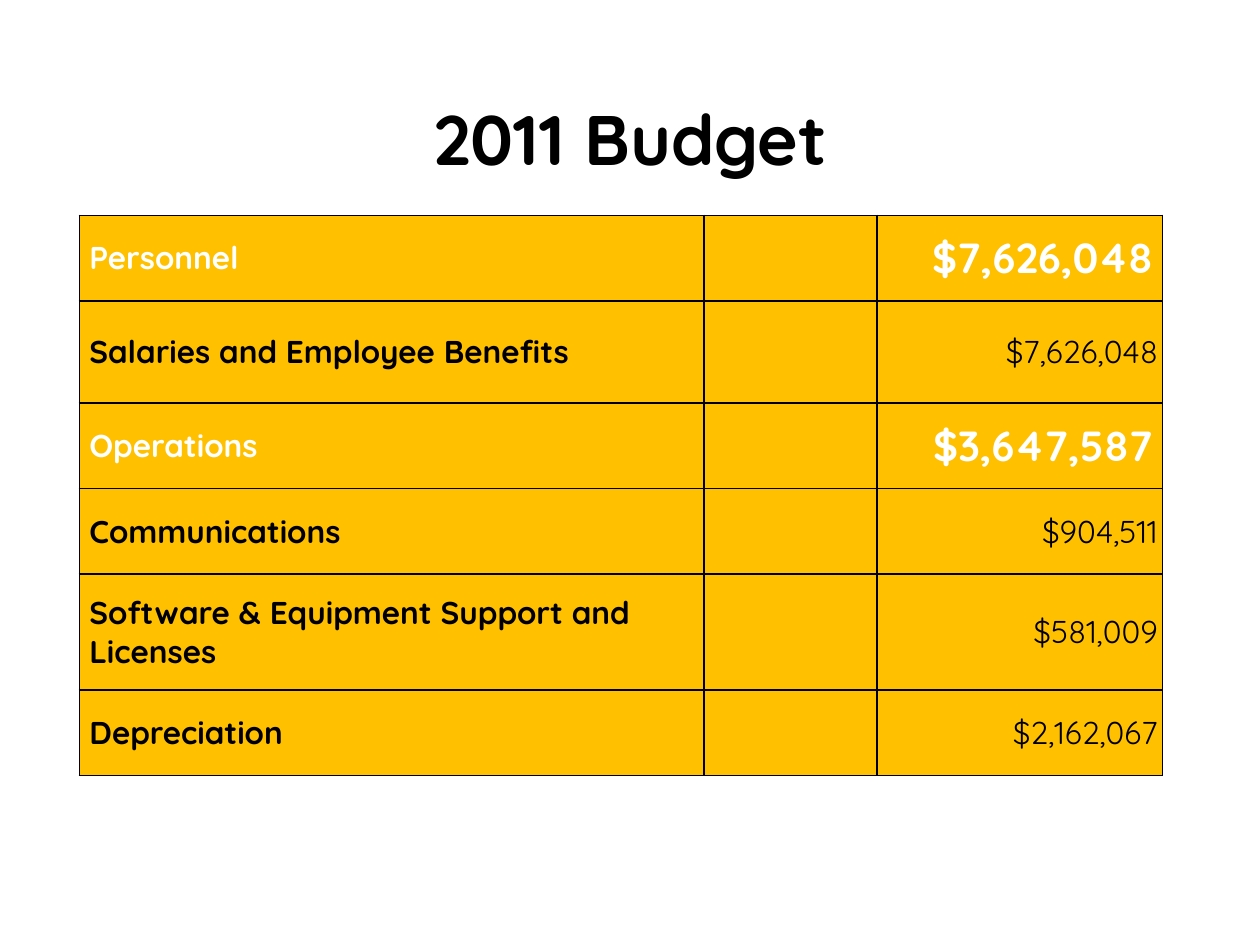
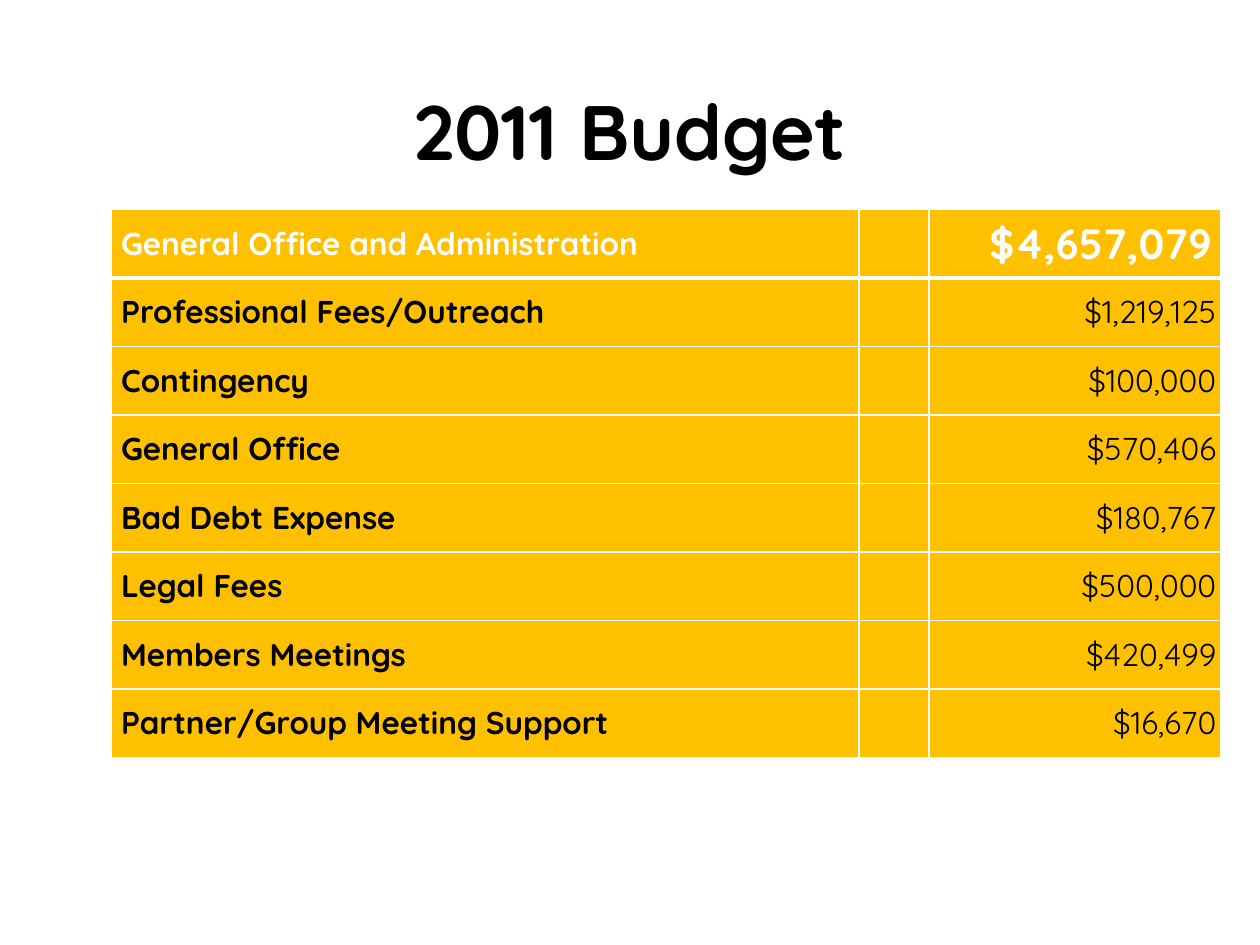
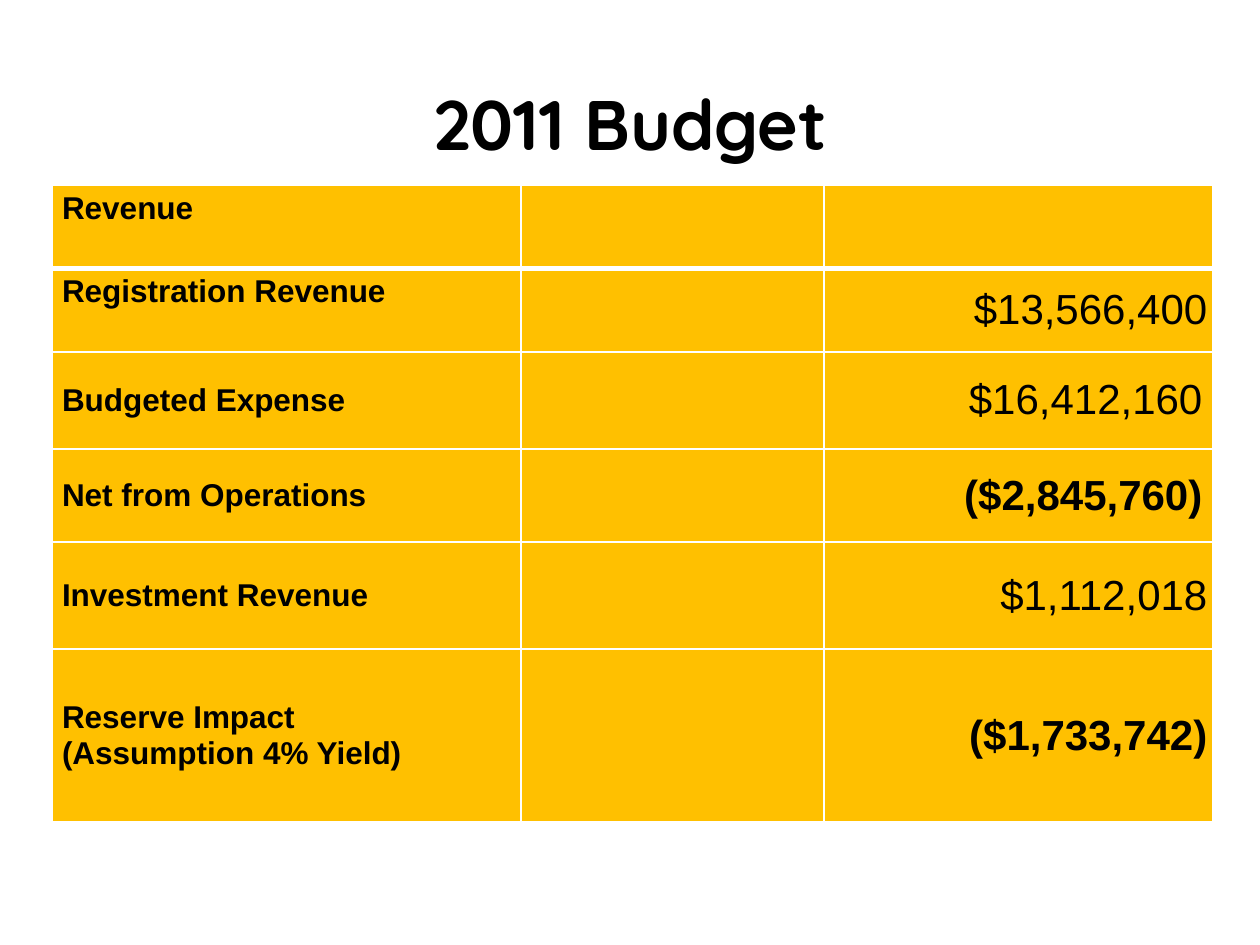
from dataclasses import dataclass

import lxml.etree
import pptx
import pptx.dml.color
import pptx.enum.text
import pptx.oxml.ns
import pptx.util

Cm = pptx.util.Cm
Pt = pptx.util.Pt
Anchor = pptx.enum.text.MSO_ANCHOR
Align = pptx.enum.text.PP_ALIGN


@dataclass(frozen=True)
class Theme:
    gold: str = "FFC000"
    black: str = "000000"
    white: str = "FFFFFF"
    display: str = "Quicksand"
    plain: str = "Arial"
    title: int = 40
    large_title: int = 44
    label: int = 18
    total: int = 24
    thin: int = 1
    thick: int = 3
    wide_inset: float = 0.2
    narrow_inset: float = 0.1


THEME = Theme()


@dataclass(frozen=True)
class Box:
    left: float
    top: float
    width: float
    height: float


@dataclass(frozen=True)
class Style:
    size: int = THEME.label
    color: str = THEME.black
    bold: bool = True
    inset: float = THEME.wide_inset
    anchor: Anchor = Anchor.MIDDLE


LABEL = Style()
TOP_LABEL = Style(anchor=Anchor.TOP)
HEADING = Style(color=THEME.white)
TOTAL = Style(size=THEME.total, color=THEME.white)
AMOUNT = Style(bold=False, inset=THEME.narrow_inset)
LARGE = Style(size=THEME.total, bold=False, inset=THEME.narrow_inset)
LARGE_INSET = Style(size=THEME.total, bold=False)
LARGE_BOLD = Style(size=THEME.total, inset=THEME.narrow_inset)
LARGE_BOLD_INSET = Style(size=THEME.total)


@dataclass(frozen=True)
class Row:
    label: str
    amount: str
    label_style: Style = LABEL
    amount_style: Style = AMOUNT


@dataclass(frozen=True)
class Budget:
    title_box: Box
    title_size: int
    table_box: Box
    columns: tuple
    heights: tuple
    rows: tuple
    font: str
    line: str
    header_rule: bool


def heading(label, amount):
    return Row(label, amount, HEADING, TOTAL)


def format_paragraph(para, size, color, bold, name, align):
    para.alignment = align
    para.font.size = Pt(size)
    para.font.bold = bold
    para.font.name = name
    para.font.color.rgb = pptx.dml.color.RGBColor.from_string(color)


def add_title(page, box, size):
    title = page.shapes.title
    title.left, title.top = Cm(box.left), Cm(box.top)
    title.width, title.height = Cm(box.width), Cm(box.height)
    frame = title.text_frame
    frame.text = "2011 Budget"
    frame.word_wrap = True
    frame.auto_size = pptx.enum.text.MSO_AUTO_SIZE.NONE
    frame.vertical_anchor = Anchor.MIDDLE
    format_paragraph(frame.paragraphs[0], size, THEME.black, True, THEME.display, Align.CENTER)


def set_borders(cell, color, top, bottom):
    properties = cell._tc.get_or_add_tcPr()
    qn = pptx.oxml.ns.qn
    widths = {"L": THEME.thin, "R": THEME.thin, "T": top, "B": bottom}
    for side, width in widths.items():
        line = lxml.etree.SubElement(properties, qn(f"a:ln{side}"), w=str(Pt(width)))
        fill = lxml.etree.SubElement(line, qn("a:solidFill"))
        lxml.etree.SubElement(fill, qn("a:srgbClr"), val=color)


def fill_cell(cell, text, style, font, align):
    cell.fill.solid()
    cell.fill.fore_color.rgb = pptx.dml.color.RGBColor.from_string(THEME.gold)
    cell.margin_left = cell.margin_right = Cm(style.inset)
    cell.margin_top = cell.margin_bottom = Cm(THEME.narrow_inset)
    cell.vertical_anchor = style.anchor
    cell.text = text
    for para in cell.text_frame.paragraphs:
        format_paragraph(para, style.size, style.color, style.bold, font, align)


def add_budget_table(page, budget):
    box = budget.table_box
    table = page.shapes.add_table(
        len(budget.rows), len(budget.columns),
        Cm(box.left), Cm(box.top), Cm(box.width), Cm(box.height),
    ).table
    for column, share in zip(table.columns, budget.columns):
        column.width = Cm(box.width * share / sum(budget.columns))
    for line, share in zip(table.rows, budget.heights):
        line.height = Cm(box.height * share / sum(budget.heights))

    for index, row in enumerate(budget.rows):
        top = THEME.thick if budget.header_rule and index == 1 else THEME.thin
        bottom = THEME.thick if budget.header_rule and index == 0 else THEME.thin
        contents = (
            (row.label, row.label_style, Align.LEFT),
            ("", LABEL, Align.LEFT),
            (row.amount, row.amount_style, Align.RIGHT),
        )
        for column, (text, style, align) in enumerate(contents):
            cell = table.cell(index, column)
            set_borders(cell, budget.line, top, bottom)
            fill_cell(cell, text, style, budget.font, align)


def add_budget_page(deck, budget):
    page = deck.slides.add_slide(deck.slide_layouts.get_by_name("Title Only"))
    add_title(page, budget.title_box, budget.title_size)
    add_budget_table(page, budget)


OPERATIONS = Budget(
    title_box=Box(0, 0.28, 25.4, 5),
    title_size=THEME.title,
    table_box=Box(1.6, 4.34, 21.84, 11.3),
    columns=(4.96, 1.37, 2.27),
    heights=(0.68, 0.81, 0.68, 0.68, 0.92, 0.68),
    rows=(
        heading("Personnel", "$7,626,048"),
        Row("Salaries and Employee Benefits", "$7,626,048"),
        heading("Operations", "$3,647,587"),
        Row("Communications", "$904,511"),
        Row("Software & Equipment Support and Licenses", "$581,009"),
        Row("Depreciation", "$2,162,067"),
    ),
    font=THEME.display,
    line=THEME.black,
    header_rule=False,
)

ADMINISTRATION = Budget(
    title_box=Box(0, 0.64, 25.4, 3.96),
    title_size=THEME.large_title,
    table_box=Box(2.24, 4.22, 22.38, 11.05),
    columns=(5.94, 0.56, 2.32),
    heights=(1,) * 8,
    rows=(
        heading("General Office and Administration", "$4,657,079"),
        Row("Professional Fees/Outreach", "$1,219,125"),
        Row("Contingency", "$100,000"),
        Row("General Office", "$570,406"),
        Row("Bad Debt Expense", "$180,767"),
        Row("Legal Fees", "$500,000"),
        Row("Members Meetings", "$420,499"),
        Row("Partner/Group Meeting Support", "$16,670"),
    ),
    font=THEME.display,
    line=THEME.white,
    header_rule=True,
)

REVENUE = Budget(
    title_box=Box(0, 0.96, 25.4, 3.02),
    title_size=THEME.title,
    table_box=Box(1.05, 3.74, 23.39, 12.83),
    columns=(3.72, 2.4, 3.08),
    heights=(0.66, 0.66, 0.77, 0.74, 0.85, 1.37),
    rows=(
        Row("Revenue", "", TOP_LABEL),
        Row("Registration Revenue", "$13,566,400", TOP_LABEL, LARGE),
        Row("Budgeted Expense", "$16,412,160", LABEL, LARGE_INSET),
        Row("Net from Operations", "($2,845,760)", LABEL, LARGE_BOLD_INSET),
        Row("Investment Revenue", "$1,112,018", LABEL, LARGE),
        Row("Reserve Impact\n(Assumption 4% Yield)", "($1,733,742)", LABEL, LARGE_BOLD),
    ),
    font=THEME.plain,
    line=THEME.white,
    header_rule=True,
)


def main():
    deck = pptx.Presentation()
    deck.slide_width, deck.slide_height = Cm(25.4), Cm(19.05)
    for budget in (OPERATIONS, ADMINISTRATION, REVENUE):
        add_budget_page(deck, budget)
    deck.save("out.pptx")


if __name__ == "__main__":
    main()
